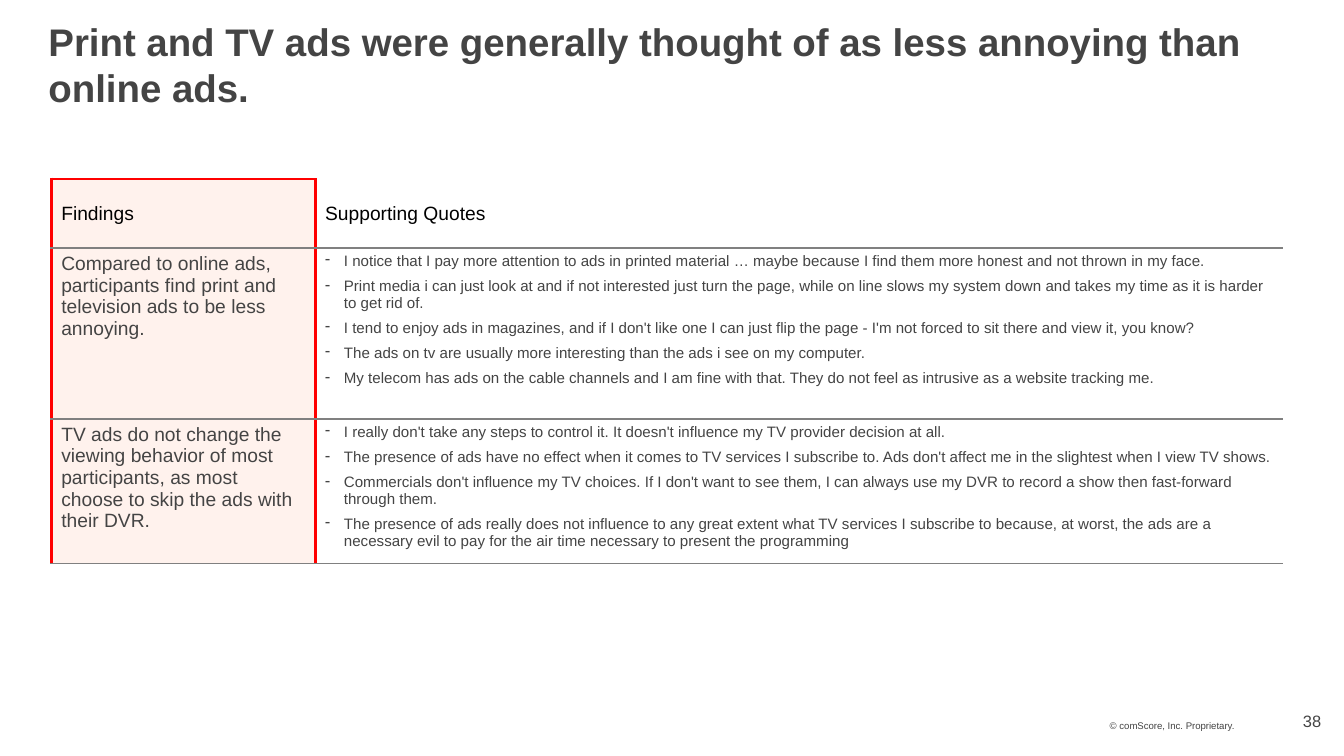
import pptx
import pptx.dml.color
import pptx.enum.text
import pptx.oxml
import pptx.oxml.ns
import pptx.util
from pptx.util import Inches

RGBColor = pptx.dml.color.RGBColor
Anchor = pptx.enum.text.MSO_ANCHOR
Align = pptx.enum.text.PP_ALIGN

GREY = RGBColor(0x44, 0x44, 0x44)
BLACK = RGBColor(0x00, 0x00, 0x00)
RED = RGBColor(0xFF, 0x00, 0x00)
RULE = RGBColor(0x80, 0x80, 0x80)
PEACH = RGBColor(0xFF, 0xCF, 0xB8)

HEADINGS = ("Findings", "Supporting Quotes")
FINDINGS = [
    (
        "Compared to online ads, participants find print and television ads to be less annoying.",
        [
            "I notice that I pay more attention to ads in printed material … maybe because I find them more honest and not thrown in my face.",
            "Print media i can just look at and if not interested just turn the page, while on line slows my system down and takes my time as it is harder to get rid of.",
            "I tend to enjoy ads in magazines, and if I don't like one I can just flip the page - I'm not forced to sit there and view it, you know?",
            "The ads on tv are usually more interesting than the ads i see on my computer.",
            "My telecom has ads on the cable channels and I am fine with that. They do not feel as intrusive as a website tracking me.",
        ],
    ),
    (
        "TV ads do not change the viewing behavior of most participants, as most choose to skip the ads with their DVR.",
        [
            "I really don't take any steps to control it. It doesn't influence my TV provider decision at all.",
            "The presence of ads have no effect when it comes to TV services I subscribe to. Ads don't affect me in the slightest when I view TV shows.",
            "Commercials don't influence my TV choices. If I don't want to see them, I can always use my DVR to record a show then fast-forward through them.",
            "The presence of ads really does not influence to any great extent what TV services I subscribe to because, at worst, the ads are a necessary evil to pay for the air time necessary to present the programming",
        ],
    ),
]


class FindingsSlide:
    """Holds the slide and its style, with a method for each kind of element."""

    font_name = "Arial"

    def __init__(self, presentation):
        self.slide = presentation.slides.add_slide(presentation.slide_layouts[5])

    def style(self, paragraph, size, color=GREY, bold=False):
        paragraph.font.name = self.font_name
        paragraph.font.size = pptx.util.Pt(size)
        paragraph.font.color.rgb = color
        paragraph.font.bold = bold

    def frame(self, shape, anchor, side, top):
        frame = shape.text_frame
        frame.word_wrap = True
        frame.auto_size = pptx.enum.text.MSO_AUTO_SIZE.NONE
        frame.vertical_anchor = anchor
        frame.margin_left = frame.margin_right = Inches(side)
        frame.margin_top, frame.margin_bottom = Inches(top), Inches(0.06)
        return frame.paragraphs[0]

    def title(self, text):
        shape = self.slide.shapes.title
        shape.left, shape.top = Inches(0.37), Inches(0.18)
        shape.width, shape.height = Inches(13), Inches(1.15)
        paragraph = self.frame(shape, Anchor.TOP, 0.12, 0)
        paragraph.text = text
        paragraph.alignment = Align.LEFT
        self.style(paragraph, 28, bold=True)

    def footer(self, text, left, top, width, height, size, side, alignment):
        shape = self.slide.shapes.add_textbox(
            Inches(left), Inches(top), Inches(width), Inches(height)
        )
        paragraph = self.frame(shape, Anchor.BOTTOM, side, 0.06)
        paragraph.text = text
        paragraph.alignment = alignment
        self.style(paragraph, size)

    def borders(self, cell, **edges):
        properties = cell._tc.get_or_add_tcPr()
        present = [side for side in "LRTB" if side in edges]
        for position, side in enumerate(present):
            color, width = edges[side]
            line = pptx.oxml.parse_xml(
                f'<a:ln{side} {pptx.oxml.ns.nsdecls("a")} w="{pptx.util.Pt(width)}">'
                f'<a:solidFill><a:srgbClr val="{color}"/></a:solidFill></a:ln{side}>'
            )
            properties.insert(position, line)

    def tint(self, cell):
        cell.fill.solid()
        cell.fill.fore_color.rgb = PEACH
        color = cell._tc.tcPr.find(".//" + pptx.oxml.ns.qn("a:srgbClr"))
        color.append(
            pptx.oxml.parse_xml(f'<a:alpha {pptx.oxml.ns.nsdecls("a")} val="25000"/>')
        )

    def quotes(self, cell, texts):
        cell.text = "\n".join(texts)
        for paragraph in cell.text_frame.paragraphs:
            properties = paragraph._p.get_or_add_pPr()
            properties.set("marL", str(Inches(0.19)))
            properties.set("indent", str(Inches(-0.19)))
            properties.append(
                pptx.oxml.parse_xml(f'<a:buChar {pptx.oxml.ns.nsdecls("a")} char="-"/>')
            )
            paragraph.space_after = pptx.util.Pt(6)
            self.style(paragraph, 11)

    def table(self, headings, findings):
        heights = (0.7, 1.73, 1.46)
        table = self.slide.shapes.add_table(
            len(heights), 2, Inches(0.52), Inches(1.81), Inches(12.46), Inches(sum(heights))
        ).table
        table.first_row = table.horz_banding = False
        for column, width in zip(table.columns, (2.67, 9.79)):
            column.width = Inches(width)
        red, grey = (RED, 2.25), (RULE, 1)
        for index, (row, height) in enumerate(zip(table.rows, heights)):
            row.height = Inches(height)
            finding, quotes = row.cells
            self.tint(finding)
            quotes.fill.background()
            self.borders(finding, L=red, R=red, T=grey if index else red, B=grey)
            top = {"T": grey} if index else {}
            self.borders(quotes, L=red, B=grey, **top)
        for cell, heading in zip(table.rows[0].cells, headings):
            cell.text = heading
            cell.vertical_anchor = Anchor.MIDDLE
            self.style(cell.text_frame.paragraphs[0], 14, BLACK)
        for index, (finding, quotes) in enumerate(findings, start=1):
            cell = table.cell(index, 0)
            cell.text = finding
            self.style(cell.text_frame.paragraphs[0], 14)
            self.quotes(table.cell(index, 1), quotes)


def main():
    presentation = pptx.Presentation()
    presentation.slide_width = Inches(13.6)
    presentation.slide_height = Inches(7.65)
    page = FindingsSlide(presentation)
    page.title("Print and TV ads were generally thought of as less annoying than online ads.")
    page.table(HEADINGS, FINDINGS)
    page.footer("© comScore, Inc. Proprietary.", 11.23, 6.95, 1.5, 0.51, 7, 0, Align.LEFT)
    page.footer("38", 12.52, 7.06, 1.09, 0.4, 12, 0.24, Align.RIGHT)
    presentation.save("out.pptx")


if __name__ == "__main__":
    main()
